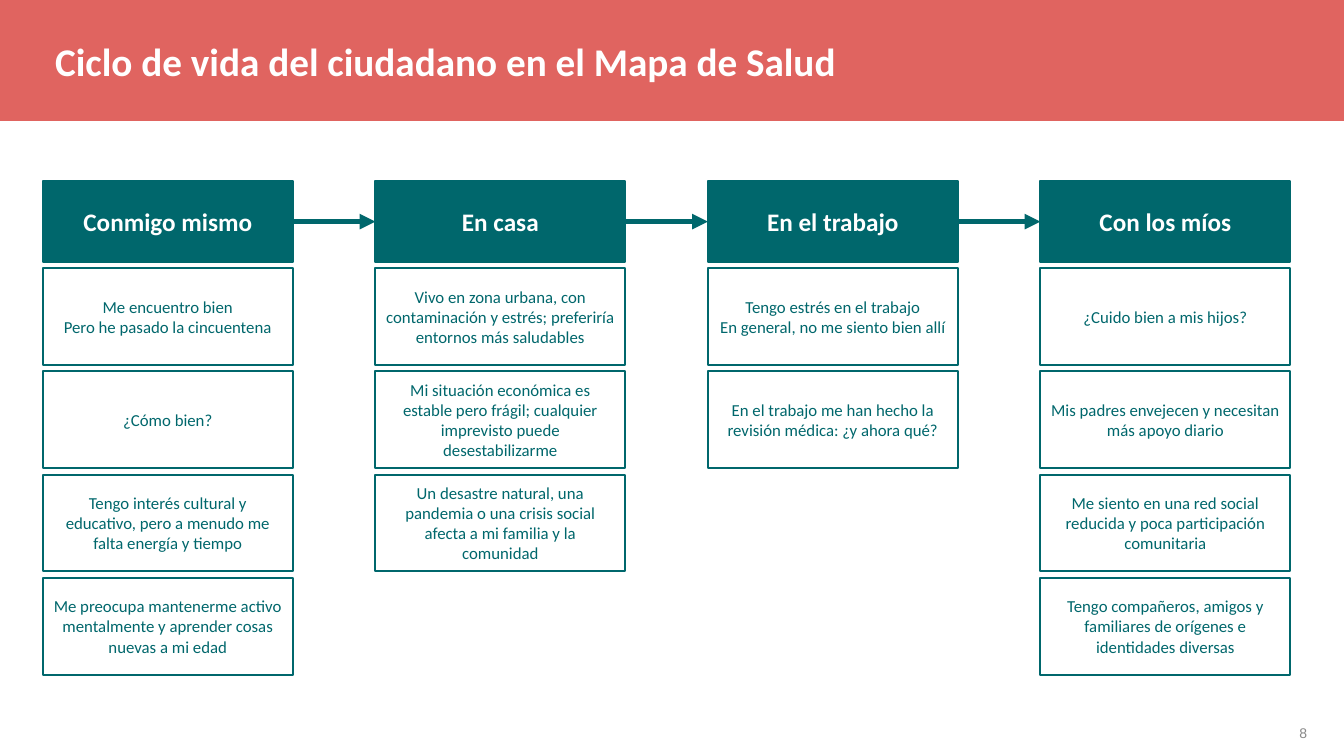
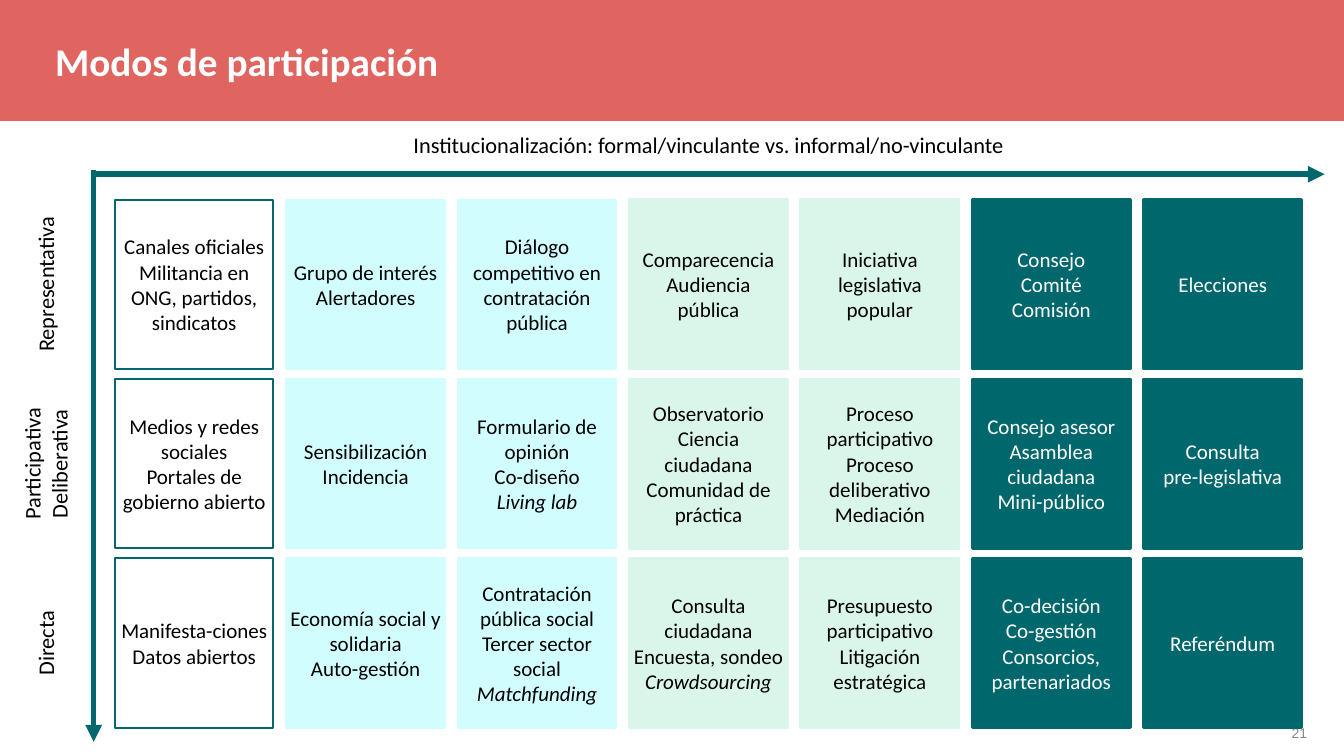
from dataclasses import dataclass

from lxml import etree
from pptx import Presentation
from pptx.dml.color import RGBColor
from pptx.enum.shapes import MSO_CONNECTOR, MSO_SHAPE
from pptx.enum.text import MSO_ANCHOR, PP_ALIGN
from pptx.oxml.ns import qn
from pptx.util import Cm, Pt

RECT = MSO_SHAPE.RECTANGLE
STRAIGHT = MSO_CONNECTOR.STRAIGHT
TOP, MIDDLE = MSO_ANCHOR.TOP, MSO_ANCHOR.MIDDLE
LEFT, CENTER, RIGHT = PP_ALIGN.LEFT, PP_ALIGN.CENTER, PP_ALIGN.RIGHT
RIGHT_SITE, LEFT_SITE = 3, 1
WIDE, HIGH = 33.87, 19.05


@dataclass(frozen=True)
class Theme:
    red: str = "D62F29"
    teal: str = "00676C"
    aqua: str = "D1FDFF"
    mint: str = "DAF6EB"
    white: str = "FFFFFF"
    black: str = "000000"
    gray: str = "898989"
    font: str = "Calibri"
    plain: str = "Arial"
    title: int = 28
    head: int = 18
    axis: int = 16
    cell: int = 15
    card: int = 12
    foot: int = 10


STYLE = Theme()


class Deck:
    def __init__(self, style):
        self.style = style
        self.deck = Presentation()
        self.deck.slide_width, self.deck.slide_height = Cm(WIDE), Cm(HIGH)
        self.shapes = None

    def page(self, title, number):
        s = self.style
        self.shapes = self.deck.slides.add_slide(self.deck.slide_layouts[6]).shapes
        self.box((0, 0, WIDE, 3.05), s.red, alpha=74)
        self.label((31.06, 18.14, 2.13, 0.74), str(number), s.foot, s.gray,
                   font=s.plain, align=RIGHT, anchor=TOP)
        self.label((1.14, 0.81, 24.26, 1.6), title, s.title, s.white,
                   bold=True, align=LEFT, anchor=TOP)

    def box(self, area, fill, edge=None, weight=1.5, alpha=100):
        shape = self.shapes.add_shape(RECT, *map(Cm, area))
        shape.shadow.inherit = False
        shape.fill.solid()
        shape.fill.fore_color.rgb = RGBColor.from_string(fill)
        if alpha < 100:
            color = shape.element.spPr.find(qn("a:solidFill"))[0]
            etree.SubElement(color, qn("a:alpha"), val=str(alpha * 1000))
        if edge:
            shape.line.color.rgb = RGBColor.from_string(edge)
            shape.line.width = Pt(weight)
        else:
            shape.line.fill.background()
        return shape

    def label(self, area, text, size, color, turn=0, **look):
        shape = self.shapes.add_textbox(*map(Cm, area))
        shape.rotation = turn
        self.letter(shape, text, size, color, **look)

    def letter(self, shape, text, size, color, bold=False, font=None,
               align=CENTER, anchor=MIDDLE, pad=None, slanted=()):
        frame = shape.text_frame
        frame.word_wrap = True
        frame.vertical_anchor = anchor
        if pad:
            frame.margin_left = frame.margin_right = Cm(pad)
            frame.margin_top = frame.margin_bottom = Cm(pad)
        frame.text = text
        for para in frame.paragraphs:
            para.alignment = align
            for run in para.runs:
                run.font.name = font or self.style.font
                run.font.size = Pt(size)
                run.font.bold = bold
                run.font.italic = run.text in slanted
                run.font.color.rgb = RGBColor.from_string(color)

    def arrow(self, start, end, weight):
        line = self.shapes.add_connector(STRAIGHT, *map(Cm, start + end))
        line.line.color.rgb = RGBColor.from_string(self.style.teal)
        line.line.width = Pt(weight)
        props = line.element.spPr
        etree.SubElement(props.find(qn("a:ln")), qn("a:tailEnd"), type="triangle")
        etree.SubElement(props, qn("a:effectLst"))
        return line

    def link(self, first, second):
        line = self.arrow((0, 0), (0, 0), 3.75)
        line.begin_connect(first, RIGHT_SITE)
        line.end_connect(second, LEFT_SITE)


STAGES = {
    "Conmigo mismo": [
        "Me encuentro bien\nPero he pasado la cincuentena",
        "¿Cómo bien?",
        "Tengo interés cultural y educativo, pero a menudo me falta energía y tiempo",
        "Me preocupa mantenerme activo mentalmente y aprender cosas nuevas a mi edad",
    ],
    "En casa": [
        "Vivo en zona urbana, con contaminación y estrés; preferiría entornos más saludables",
        "Mi situación económica es estable pero frágil; cualquier imprevisto puede desestabilizarme",
        "Un desastre natural, una pandemia o una crisis social afecta a mi familia y la comunidad",
    ],
    "En el trabajo": [
        "Tengo estrés en el trabajo\nEn general, no me siento bien allí",
        "En el trabajo me han hecho la revisión médica: ¿y ahora qué?",
    ],
    "Con los míos": [
        "¿Cuido bien a mis hijos?",
        "Mis padres envejecen y necesitan más apoyo diario",
        "Me siento en una red social reducida y poca participación comunitaria",
        "Tengo compañeros, amigos y familiares de orígenes e identidades diversas",
    ],
}

MODES = {
    "Representativa": [
        "Canales oficiales\nMilitancia en ONG, partidos, sindicatos",
        "Grupo de interés\nAlertadores",
        "Diálogo competitivo en contratación pública",
        "Comparecencia\nAudiencia pública",
        "Iniciativa legislativa popular",
        "Consejo\nComité\nComisión",
        "Elecciones",
    ],
    "Participativa Deliberativa": [
        "Medios y redes sociales\nPortales de gobierno abierto",
        "Sensibilización\nIncidencia",
        "Formulario de opinión\nCo-diseño\nLiving lab",
        "Observatorio\nCiencia ciudadana\nComunidad de práctica",
        "Proceso participativo\nProceso deliberativo\nMediación",
        "Consejo asesor\nAsamblea ciudadana\nMini-público",
        "Consulta\npre-legislativa",
    ],
    "Directa": [
        "Manifesta-ciones\nDatos abiertos",
        "Economía social y solidaria\nAuto-gestión",
        "Contratación pública social Tercer sector social\nMatchfunding",
        "Consulta ciudadana\nEncuesta, sondeo\nCrowdsourcing",
        "Presupuesto participativo\nLitigación estratégica",
        "Co-decisión\nCo-gestión\nConsorcios, partenariados",
        "Referéndum",
    ],
}
SLANTED = ("Living lab", "Matchfunding", "Crowdsourcing")


def cycle(deck):
    s = deck.style
    deck.page("Ciclo de vida del ciudadano en el Mapa de Salud", 8)
    last = None
    for col, (stage, cards) in enumerate(STAGES.items()):
        left = 1.08 + col * 8.38
        head = deck.box((left, 4.57, 6.3, 2.03), s.teal, s.teal)
        deck.letter(head, stage, s.head, s.white, bold=True)
        if last:
            deck.link(last, head)
        last = head
        for row, text in enumerate(cards):
            card = deck.box((left, 6.76 + row * 2.6, 6.3, 2.44), s.white, s.teal, alpha=56)
            deck.letter(card, text, s.card, s.teal)


def modes(deck):
    s = deck.style
    deck.page("Modos de participación", 21)
    deck.arrow((2.36, 4.29), (2.36, 18.69), 4)
    deck.arrow((2.36, 4.39), (33.38, 4.39), 4)
    deck.label((2.9, 3.07, 29.92, 1.14),
               "Institucionalización: formal/vinculante vs. informal/no-vinculante",
               s.axis, s.black)
    open_look = (s.white, s.teal, 1.5, 50)
    aqua_look = (s.aqua, s.aqua, 1.5)
    mint_look = (s.mint, s.mint, 2)
    teal_look = (s.teal, s.teal, 2)
    looks = [open_look] + [aqua_look] * 2 + [mint_look] * 2 + [teal_look] * 2
    side, deep = 4.27, 2.26
    for row, (mode, cells) in enumerate(MODES.items()):
        top = 5.03 + row * 4.52
        deck.label((1.14 - side / 2, top + (side - deep) / 2, side, deep),
                   mode, s.axis, s.black, turn=270, pad=0.13)
        for col, (text, look) in enumerate(zip(cells, looks)):
            cell = deck.box((2.9 + col * 4.32, top, 3.99, side), *look)
            ink = s.white if look is teal_look else s.black
            deck.letter(cell, text, s.cell, ink, pad=0.1, slanted=SLANTED)


def main():
    deck = Deck(STYLE)
    cycle(deck)
    modes(deck)
    deck.deck.save("out.pptx")


if __name__ == "__main__":
    main()
